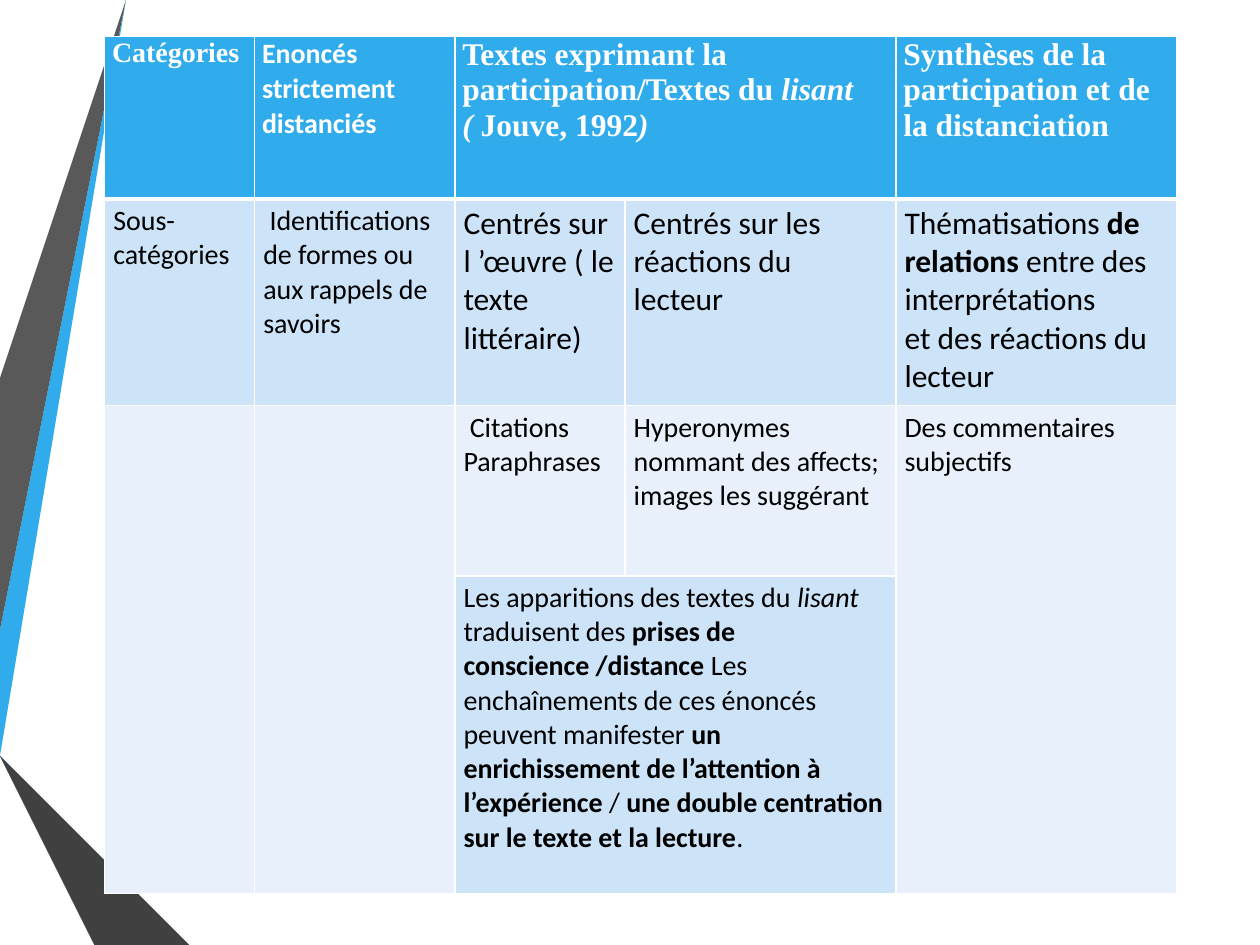
"""Build a slide with a table of reading categories beside crossing ribbons."""
import pptx
import pptx.dml.color
import pptx.oxml
import pptx.oxml.ns
import pptx.util

RGBColor = pptx.dml.color.RGBColor
Inches = pptx.util.Inches
WHITE = RGBColor(0xFF, 0xFF, 0xFF)
BLACK = RGBColor(0x00, 0x00, 0x00)
SKY = RGBColor(0x30, 0xAC, 0xEC)
BLUE = RGBColor(0x12, 0x87, 0xC3)
DEEP_BLUE = RGBColor(0x0C, 0x5A, 0x82)
GREY = RGBColor(0x59, 0x59, 0x59)
DARK_GREY = RGBColor(0x40, 0x40, 0x40)
SHADE = RGBColor(0x26, 0x26, 0x26)
PALE = RGBColor(0xCD, 0xE3, 0xF8)
PALEST = RGBColor(0xE8, 0xF1, 0xFB)


def write(frame, text, size=16, font="Calibri", color=BLACK, bold=False, spacing=1.0, after=0):
    """Fill a text frame; lines are paragraphs, *bold* and _italic_ mark spans."""
    for number, line in enumerate(text.split("\n")):
        para = frame.paragraphs[0] if number == 0 else frame.add_paragraph()
        para.line_spacing = spacing
        para.space_after = pptx.util.Pt(after)
        for strong, part in enumerate(line.split("*")):
            for slanted, words in enumerate(part.split("_")):
                if words:
                    span = para.add_run()
                    span.text = words
                    span.font.size = pptx.util.Pt(size)
                    span.font.name = font
                    span.font.color.rgb = color
                    span.font.bold = bold or strong % 2 == 1
                    span.font.italic = slanted % 2 == 1


def draw_borders(cell, **widths):
    """Give the named sides of a cell white lines of the given point widths."""
    properties = cell._tc.get_or_add_tcPr()
    for side, width in widths.items():
        properties.append(pptx.oxml.parse_xml(
            f'<a:ln{side} {pptx.oxml.ns.nsdecls("a")} w="{pptx.util.Pt(width)}">'
            f'<a:solidFill><a:srgbClr val="{WHITE}"/></a:solidFill></a:ln{side}>'))


deck = pptx.Presentation()
deck.slide_width, deck.slide_height = Inches(10), Inches(7.5)
page = deck.slides.add_slide(deck.slide_layouts[6])

ribbons = [
    (SKY, [(0, 5.44), (0, 5.75), (0.22, 5.79), (1.17, 0), (0.89, 0)]),
    (GREY, [(0.83, 0), (0.55, 0), (0, 3.36), (0, 5.06)]),
    (SHADE, [(0, 6.19), (0, 6.21), (0.93, 7.5), (0.99, 7.5)]),
    (DEEP_BLUE, [(0, 5.79), (0, 5.8), (1.56, 7.5), (1.63, 7.5)]),
    (BLUE, [(0, 5.79), (1.63, 7.5), (2.33, 7.5), (0.22, 5.79), (0, 5.75)]),
    (DARK_GREY, [(0, 6.19), (0.99, 7.5), (1.51, 7.5), (0, 5.86)]),
]
for color, points in ribbons:
    builder = page.shapes.build_freeform(*points[0], scale=Inches(1))
    builder.add_line_segments(points[1:], close=True)
    ribbon = builder.convert_to_shape()
    ribbon.shadow.inherit = False
    ribbon.fill.solid()
    ribbon.fill.fore_color.rgb = color
    ribbon.line.fill.background()

column_widths = [1.19, 1.59, 1.35, 2.15, 2.23]
row_heights = [1.29, 1.64, 1.35, 2.52]
table = page.shapes.add_table(
    len(row_heights), len(column_widths), Inches(0.83), Inches(0.29),
    Inches(sum(column_widths)), Inches(sum(row_heights))).table
table.first_row = table.horz_banding = False
for column, width in zip(table.columns, column_widths):
    column.width = Inches(width)
for row, height in zip(table.rows, row_heights):
    row.height = Inches(height)

row_fills = [SKY, PALE, PALEST, PALE]
for row, fill in enumerate(row_fills):
    for column in range(len(column_widths)):
        cell = table.cell(row, column)
        draw_borders(cell, L=1, R=1, T=3 if row == 1 else 1, B=3 if row == 0 else 1)
        cell.fill.solid()
        cell.fill.fore_color.rgb = fill
        cell.margin_left = cell.margin_right = Inches(0.06 if row == 0 else 0.07)
        cell.margin_top = cell.margin_bottom = Inches(0 if row == 0 else 0.04)

merges = [((0, 2), (0, 3)), ((2, 0), (3, 0)), ((2, 1), (3, 1)), ((2, 4), (3, 4)), ((3, 2), (3, 3))]
for first, last in merges:
    table.cell(*first).merge(table.cell(*last))

headings = [
    (0, "Catégories", 16, "Times New Roman"),
    (1, "Enoncés strictement distanciés", 16, "Calibri"),
    (2, "Textes exprimant la participation/Textes du _lisant ( _Jouve, 1992_)_", 18, "Times New Roman"),
    (4, "Synthèses de la participation et de la distanciation", 18, "Times New Roman"),
]
for column, text, size, font in headings:
    write(table.cell(0, column).text_frame, text, size=size, font=font, color=WHITE,
          bold=True, spacing=1.02, after=0 if column == 4 else 8)

entries = [
    (1, 0, 16, "Sous-catégories"),
    (1, 1, 16, " Identifications de formes ou aux rappels de savoirs"),
    (1, 2, 18, "Centrés sur l ’œuvre ( le texte littéraire)"),
    (1, 3, 18, "Centrés sur les réactions du lecteur"),
    (1, 4, 18, "Thématisations *de relations* entre des interprétations\net des réactions du lecteur"),
    (2, 2, 16, " Citations\nParaphrases"),
    (2, 3, 16, "Hyperonymes nommant des affects;\nimages les suggérant"),
    (2, 4, 16, "Des commentaires subjectifs"),
    (3, 2, 16, "Les apparitions des textes du _lisant_ traduisent des *prises de conscience /distance *"
               "Les enchaînements de ces énoncés peuvent manifester *un enrichissement de l’attention à "
               "l’expérience* / *une double centration sur le texte et la lecture*."),
]
for row, column, size, text in entries:
    write(table.cell(row, column).text_frame, text, size=size)

deck.save("out.pptx")
